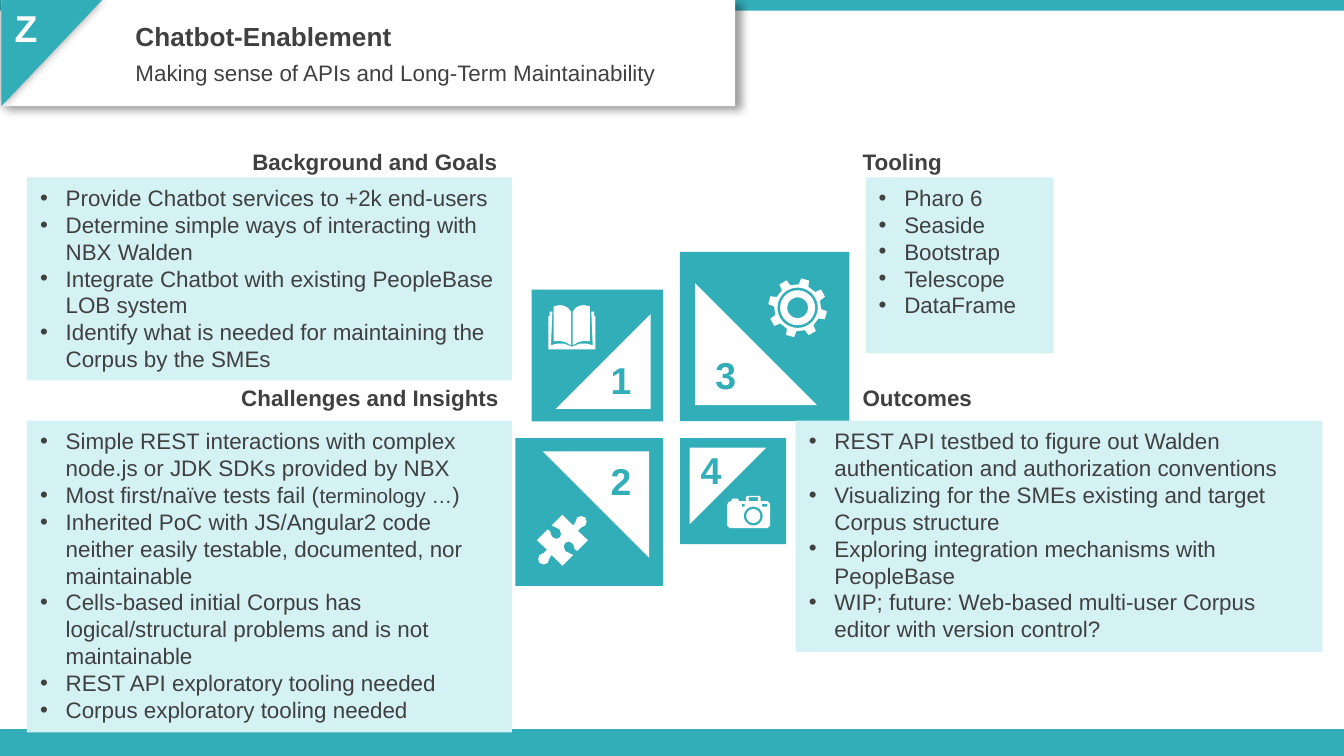
from math import cos, radians, sin

from lxml.etree import SubElement
from pptx import Presentation
from pptx.dml.color import RGBColor
from pptx.enum.shapes import MSO_SHAPE
from pptx.enum.text import MSO_ANCHOR, PP_ALIGN
from pptx.oxml.ns import qn
from pptx.util import Inches, Pt

# The slide is a grid of 1000 columns by 562.5 rows.
COLUMNS, ROWS = 1000, 562.5
TEAL, PALE, WHITE, INK = "32AEB8", "D4F1F3", "FFFFFF", "404040"
FONT = "Arial"


def grid(steps):
    return Inches(steps / 100)


def color(value):
    return RGBColor.from_string(value)


def paint(shape, fill):
    shape.shadow.inherit = False
    shape.fill.solid()
    shape.fill.fore_color.rgb = color(fill)
    shape.line.fill.background()
    return shape


def add_block(page, box, fill, kind=MSO_SHAPE.RECTANGLE, rotation=0):
    shape = paint(page.shapes.add_shape(kind, *map(grid, box)), fill)
    shape.rotation = rotation
    return shape


def set_font(font, size, ink, bold=False):
    font.name, font.size, font.bold = FONT, Pt(size), bold
    font.color.rgb = color(ink)


def add_label(page, box, text, size, ink=INK, bold=False, align=PP_ALIGN.LEFT):
    frame = page.shapes.add_textbox(*map(grid, box)).text_frame
    frame.word_wrap = True
    para = frame.paragraphs[0]
    para.text, para.alignment = text, align
    set_font(para.font, size, ink, bold)


def add_shadow(shape, distance=0):
    """Add a soft black shadow, moved right and down by a distance in points."""
    effects = shape._element.spPr.find(qn("a:effectLst"))
    shadow = SubElement(effects, qn("a:outerShdw"), blurRad=str(Pt(5)), dist=str(Pt(distance)),
                        dir=str(30 * 60000), rotWithShape="0")
    black = SubElement(shadow, qn("a:srgbClr"), val="000000")
    SubElement(black, qn("a:alpha"), val="40000")


def add_bullet(para):
    props = para._p.get_or_add_pPr()
    indent = Inches(0.19)
    props.set("marL", str(indent))
    props.set("indent", str(-indent))
    SubElement(props, qn("a:buFont"), typeface=FONT)
    SubElement(props, qn("a:buChar"), char="•")


def add_header(page, box, letter, title, subtitle):
    left, top, width, height = box
    add_shadow(add_block(page, box, WHITE), 3)
    add_shadow(add_block(page, (left - 2, top + 2, height, height - 4), TEAL, MSO_SHAPE.RIGHT_TRIANGLE, 90))
    add_label(page, (left, top - 1, 65, 44), letter, 20, WHITE, True)
    add_label(page, (left + 90, top + 10, 376, 34), title, 14, bold=True)
    add_label(page, (left + 90, top + 39, 456, 30), subtitle, 12)


def add_panel(page, box, heading, heading_box, align, items):
    """Add a heading and its bullet list; the middle part of a tuple is smaller."""
    frame = add_block(page, box, PALE).text_frame
    frame.word_wrap = True
    frame.vertical_anchor = MSO_ANCHOR.TOP
    for index, item in enumerate(items):
        para = frame.add_paragraph() if index else frame.paragraphs[0]
        para.alignment = PP_ALIGN.LEFT
        add_bullet(para)
        set_font(para.font, 12, INK)
        parts = (item,) if isinstance(item, str) else item
        for position, part in enumerate(parts):
            span = para.add_run()
            span.text = part
            if position == 1:
                span.font.size = Pt(11)
    add_label(page, heading_box, heading, 12, bold=True, align=align)


def add_tile(page, side, column, row, rotation, number, number_at):
    """Add a square whose inner corner meets the middle of the pinwheel."""
    left = 506 if column else 493.5 - side
    top = 326 if row else 313.5 - side
    add_block(page, (left, top, side, side), TEAL)
    margin_x, margin_y = (0.09 if near else 0.185 for near in (column, row))
    triangle = (left + margin_x * side, top + margin_y * side, 0.72 * side, 0.72 * side)
    add_block(page, triangle, WHITE, MSO_SHAPE.RIGHT_TRIANGLE, rotation)
    add_label(page, (*number_at, 44, 44), number, 20, TEAL, True, PP_ALIGN.CENTER)


def add_icon(page, center, contours):
    """Draw contours, given in grid steps around the center, as one outline."""
    placed = [[(grid(center[0] + x), grid(center[1] + y)) for x, y in contour] for contour in contours]
    builder = page.shapes.build_freeform(*placed[0][0])
    for index, points in enumerate(placed):
        if index:
            builder.move_to(*points[0])
        builder.add_line_segments(points[1:], close=True)
    paint(builder.convert_to_shape(), WHITE)


def polar(radius, angle):
    return radius * cos(radians(angle)), radius * sin(radians(angle))


def circle(radius, x=0, y=0):
    points = (polar(radius, angle) for angle in range(0, 360, 10))
    return [(x + across, y + down) for across, down in points]


def rectangle(left, top, right, bottom):
    return [(left, top), (right, top), (right, bottom), (left, bottom)]


def book():
    leaf = [(-0.6, -11.5), (-3, -14.5), (-6, -16), (-9, -16.5), (-13.5, -15.5), (-13.5, 10.5),
            (-9, 10.2), (-5, 11), (-0.6, 13.5)]
    cover = [(-14.5, -11.5), (-15.5, 13.5), (-11, 12.2), (-6, 12.2), (0, 14.5), (0, 16.5),
             (-17.5, 16.5), (-17.5, -8.5), (-16.5, -8.5), (-16.5, -11.5)]
    halves = [leaf, cover]
    return halves + [[(-x, y) for x, y in half] for half in halves]


def gear():
    corners = ((17.5, -12), (22, -8), (22, 8), (17.5, 12))
    teeth = [polar(radius, tooth + offset) for tooth in range(-75, 285, 45) for radius, offset in corners]
    return [teeth, circle(15), circle(13), circle(7.7)]


def puzzle():
    half = [(17, -17), (18, -14), (17, -11), (14, -9.5), (11.5, -7), (19, 0), (11, 8), (9, 6.5),
            (8.5, 4), (7, 2), (4.5, 1), (2, 2), (1, 4.5), (2, 8), (4.5, 9.3), (8, 11),
            (0, 19), (-8, 11), (-9.5, 13), (-11, 17), (-14, 18)]
    return [half + [(-x, -y) for x, y in half]]


def camera():
    body = [(-16, -5), (-15, -7.5), (-13, -8), (-12, -10), (-8, -10), (-7, -8), (-2, -8),
            (-2, -11), (-1, -12), (8, -12), (9, -11), (9, -8), (14, -8), (15.5, -7),
            (16, -5), (16, 10), (14, 12), (-14, 12), (-16, 10)]
    windows = [rectangle(-5, -6, -3, -4), rectangle(10, -6, 14, -4), rectangle(0, -11, 7, -8)]
    return [body, *windows, circle(7, 3.5, 3), circle(5.2, 3.5, 3)]


def main():
    deck = Presentation()
    deck.slide_width, deck.slide_height = grid(COLUMNS), grid(ROWS)
    page = deck.slides.add_slide(deck.slide_layouts[6])
    add_block(page, (0, 542.5, COLUMNS, 20), TEAL)
    add_block(page, (0, 0, COLUMNS, 8), TEAL)

    add_tile(page, 98, 0, 0, 270, "1", (440, 261))
    add_tile(page, 126, 1, 0, 0, "3", (518, 257))
    add_tile(page, 110, 0, 1, 180, "2", (440, 336))
    add_tile(page, 79, 1, 1, 90, "4", (507, 328))
    add_icon(page, (425.5, 243.5), book())
    add_icon(page, (418.5, 402), puzzle())
    add_icon(page, (593.5, 229), gear())
    add_icon(page, (557, 381), camera())

    add_header(page, (1, 0, 546, 79), "Z", "Chatbot-Enablement",
               "Making sense of APIs and Long-Term Maintainability")
    add_panel(page, (20, 132, 361, 151), "Background and Goals", (174, 105.5, 206, 30), PP_ALIGN.RIGHT, [
        "Provide Chatbot services to +2k end-users",
        "Determine simple ways of interacting with NBX Walden",
        "Integrate Chatbot with existing PeopleBase LOB system",
        "Identify what is needed for maintaining the Corpus by the SMEs"])
    add_panel(page, (644, 132, 140, 131), "Tooling", (632, 105.5, 125, 31), PP_ALIGN.LEFT,
              ["Pharo 6", "Seaside", "Bootstrap", "Telescope", "DataFrame"])
    add_panel(page, (20, 313, 361, 232), "Challenges and Insights", (146, 281, 235, 30), PP_ALIGN.RIGHT, [
        "Simple REST interactions with complex node.js or JDK SDKs provided by NBX",
        ("Most first/naïve tests fail (", "terminology …", ")"),
        "Inherited PoC with JS/Angular2 code neither easily testable, documented, nor maintainable",
        "Cells-based initial Corpus has logical/structural problems and is not maintainable",
        "REST API exploratory tooling needed",
        "Corpus exploratory tooling needed"])
    add_panel(page, (592, 313, 392, 172), "Outcomes", (632, 281, 117, 30), PP_ALIGN.LEFT, [
        "REST API testbed to figure out Walden authentication and authorization conventions",
        "Visualizing for the SMEs existing and target Corpus structure",
        "Exploring integration mechanisms with PeopleBase",
        "WIP; future: Web-based multi-user Corpus editor with version control?"])
    deck.save("out.pptx")


if __name__ == "__main__":
    main()
